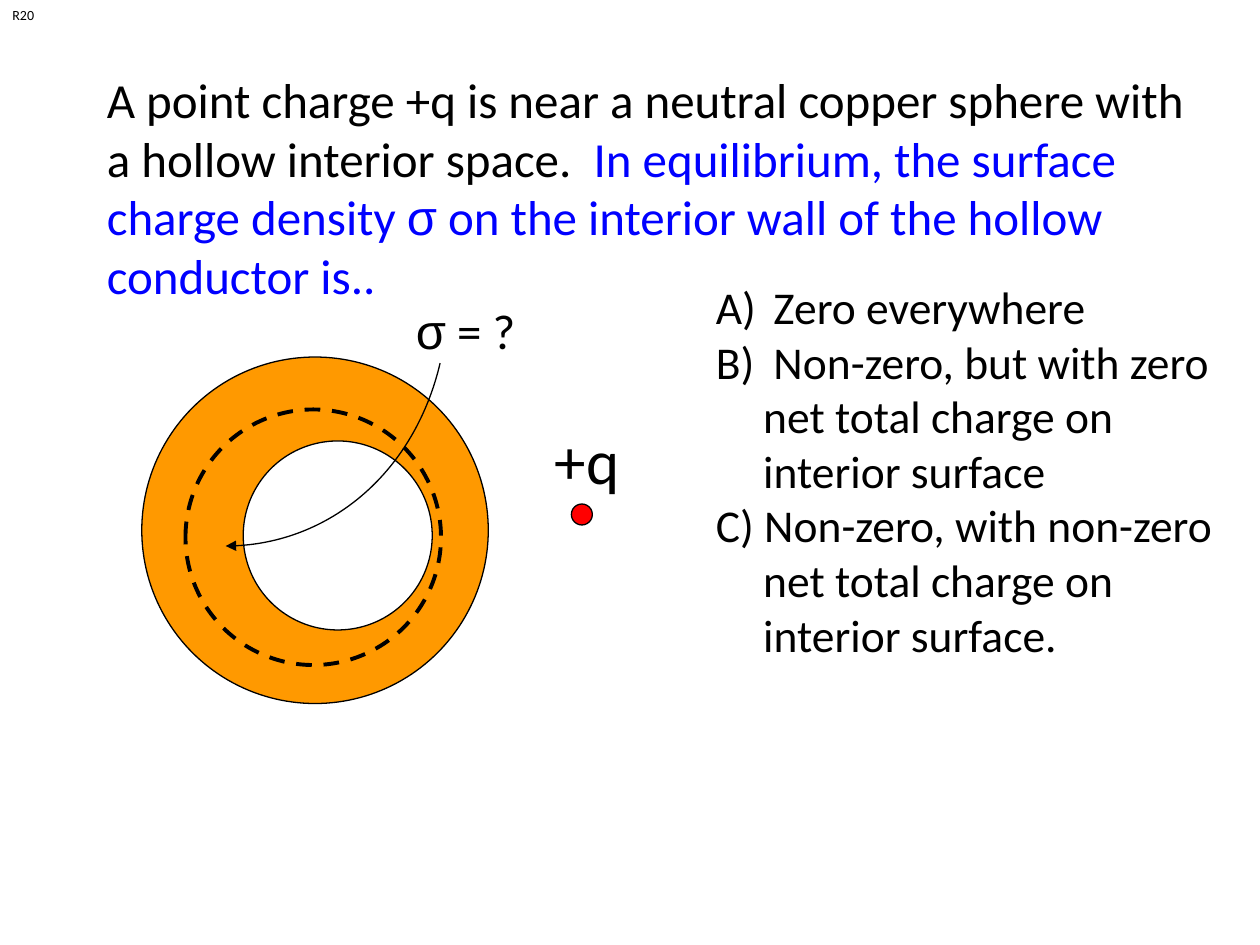
from dataclasses import dataclass

from lxml import etree
from pptx import Presentation
from pptx import util as u
from pptx.dml.color import RGBColor
from pptx.enum import dml, shapes, text
from pptx.oxml import ns

Pt = u.Pt


@dataclass(frozen=True)
class Theme:
    ink: str = "000000"
    question: str = "0000FF"
    copper: str = "FF9900"
    hollow: str = "FFFFFF"
    charge: str = "FF0000"
    font: str = "Calibri"
    greek: str = "Arial"
    body: float = 28
    answer: float = 26
    label: float = 36
    code: float = 8
    thin: float = 0.75
    thick: float = 2.25


THEME = Theme()


def add_span(para, words, size=THEME.body, font=THEME.font, color=THEME.ink):
    span = para.add_run()
    span.text = words
    span.font.size = Pt(size)
    span.font.name = font
    span.font.color.rgb = RGBColor.from_string(color)


def add_frame(page, left, top, width, height, wrap=True, grow=True):
    box = page.shapes.add_textbox(Pt(left), Pt(top), Pt(width), Pt(height))
    frame = box.text_frame
    frame.word_wrap = wrap
    if grow:
        frame.auto_size = text.MSO_AUTO_SIZE.SHAPE_TO_FIT_TEXT
    return frame


def style_line(shape, width=THEME.thin):
    shape.shadow.inherit = False
    shape.line.color.rgb = RGBColor.from_string(THEME.ink)
    shape.line.width = Pt(width)


def add_circle(page, left, top, size, fill=None, width=THEME.thin):
    circle = page.shapes.add_shape(
        shapes.MSO_SHAPE.OVAL, Pt(left), Pt(top), Pt(size), Pt(size))
    style_line(circle, width)
    if fill:
        circle.fill.solid()
        circle.fill.fore_color.rgb = RGBColor.from_string(fill)
    else:
        circle.fill.background()
    return circle


def add_curved_arrow(page, tip, tip_control, end_control, end):
    """Draw a cubic curve with its arrowhead at the tip."""
    builder = page.shapes.build_freeform(Pt(tip[0]), Pt(tip[1]))
    builder.add_line_segments([(Pt(end[0]), Pt(end[1]))], close=False)
    curve = builder.convert_to_shape()
    curve.fill.background()
    style_line(curve)

    # Turn the straight segment into a curve
    segment = curve._element.find(".//" + ns.qn("a:lnTo"))
    segment.tag = ns.qn("a:cubicBezTo")
    for index, (x, y) in enumerate((tip_control, end_control)):
        point = etree.Element(ns.qn("a:pt"))
        point.set("x", str(Pt(x) - curve.left))
        point.set("y", str(Pt(y) - curve.top))
        segment.insert(index, point)

    head = etree.SubElement(curve.line._get_or_add_ln(), ns.qn("a:headEnd"))
    head.set("type", "triangle")


def add_question(page, left, top, width, height):
    para = add_frame(page, left, top, width, height, grow=False).paragraphs[0]
    para.space_before = Pt(5.6)
    add_span(para, "A point charge +q is near a neutral copper sphere "
                   "with a hollow interior space.  ")
    add_span(para, "In equilibrium, the surface charge density ",
             color=THEME.question)
    add_span(para, "σ", font=THEME.greek, color=THEME.question)
    add_span(para, " on the interior wall of the hollow conductor is..",
             color=THEME.question)


def add_sphere(page, left, top, size):
    # Copper shell, hollow space and dashed surface within the metal
    add_circle(page, left, top, size, THEME.copper)
    add_circle(page, left + 58, top + 48, 108, THEME.hollow)
    # Pointer from the label to the interior wall
    add_curved_arrow(page, (left + 48, top + 108), (left + 106, top + 108),
                     (left + 156, top + 65), (left + 170.5, top + 3.5))
    dashed = add_circle(page, left + 25, top + 30, 146, width=THEME.thick)
    dashed.line.dash_style = dml.MSO_LINE.DASH
    # Label
    para = add_frame(page, left + 149.5, top - 36, 79, 41,
                     wrap=False).paragraphs[0]
    add_span(para, "σ", font=THEME.greek)
    add_span(para, " = ?")


def add_charge(page, left, top, width, height):
    para = add_frame(page, left, top, width, height, wrap=False).paragraphs[0]
    add_span(para, "+q", size=THEME.label)
    add_circle(page, left + 16.5, top + height, 12, THEME.charge)


def add_answers(page, left, top, width, height):
    frame = add_frame(page, left, top, width, height)
    answers = (
        (" Zero everywhere", True),
        (" Non-zero, but with zero net total charge on interior surface", True),
        ("C) Non-zero, with non-zero net total charge on interior surface.",
         False),
    )
    for index, (words, numbered) in enumerate(answers):
        para = frame.add_paragraph() if index else frame.paragraphs[0]
        layout = para._p.get_or_add_pPr()
        layout.set("marL", str(Pt(27)))
        layout.set("indent", str(-Pt(27)))
        if numbered:
            bullet = etree.SubElement(layout, ns.qn("a:buAutoNum"))
            bullet.set("type", "alphaUcParenR")
        add_span(para, words, size=THEME.answer)


def add_code(page, left, top, width, height):
    para = add_frame(page, left, top, width, height, wrap=False).paragraphs[0]
    add_span(para, "R20", size=THEME.code)


def main():
    deck = Presentation()
    deck.slide_width, deck.slide_height = Pt(720), Pt(540)
    page = deck.slides.add_slide(deck.slide_layouts[6])
    add_question(page, 54, 36, 648, 156)
    add_sphere(page, 81, 204, 198)
    add_charge(page, 310, 237.5, 55.5, 50.5)
    add_answers(page, 402, 156, 300, 227.5)
    add_code(page, 0, 0, 27.5, 17)
    deck.save("out.pptx")


if __name__ == "__main__":
    main()
